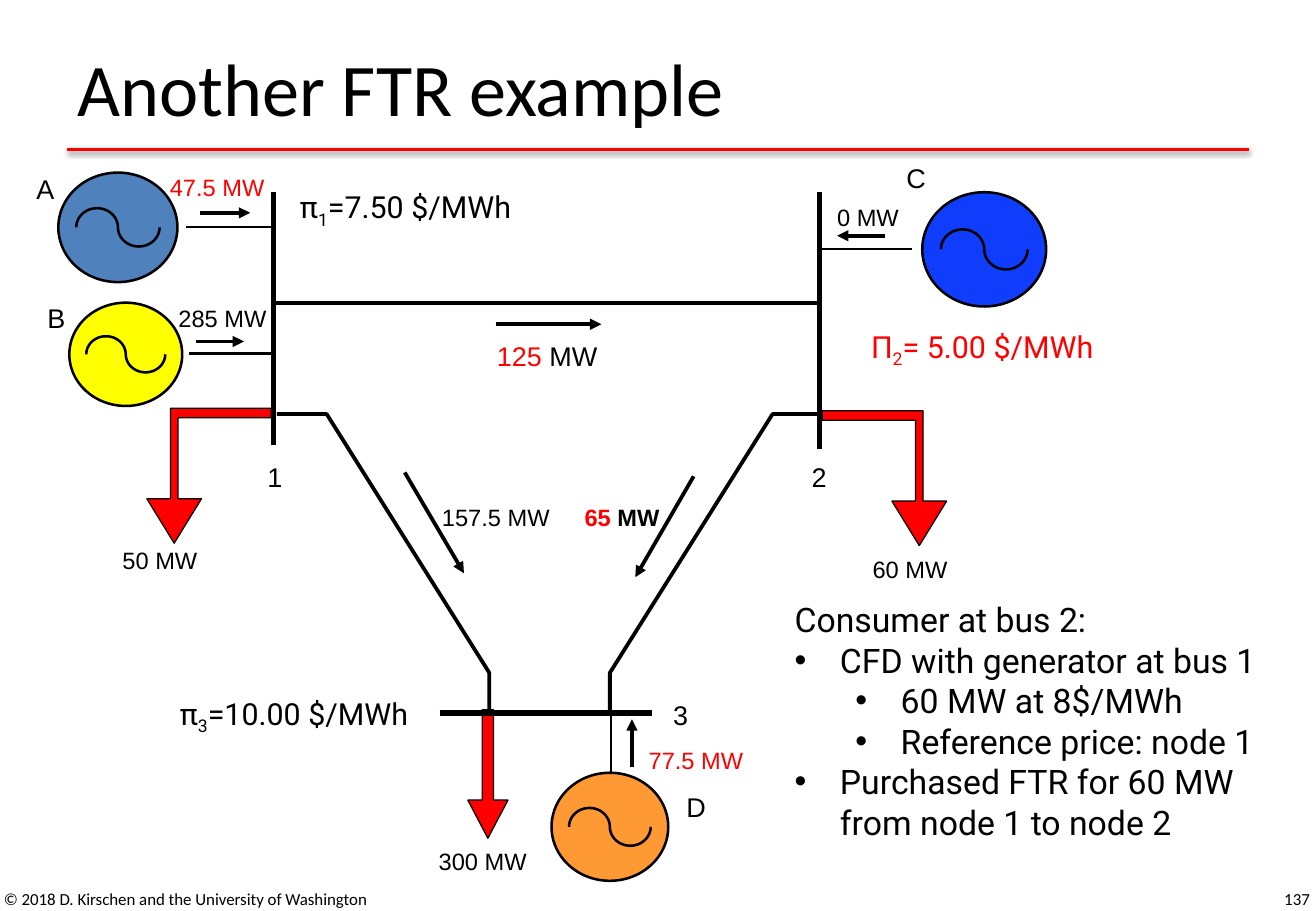
from dataclasses import dataclass
from math import cos, pi, sin

from lxml.etree import SubElement
from pptx import Presentation
from pptx.dml.color import RGBColor
from pptx.enum.shapes import MSO_CONNECTOR, MSO_SHAPE
from pptx.enum.text import MSO_ANCHOR, MSO_AUTO_SIZE, PP_ALIGN
from pptx.oxml.ns import qn
from pptx.util import Cm, Pt

COLORS = {"black": "000000", "red": "FF0000", "steel": "4F81BD",
          "yellow": "FFFF00", "blue": "103DFC", "orange": "FF9933"}
NO_MARGINS = {"margin_left": 0, "margin_right": 0, "margin_top": 0, "margin_bottom": 0}
TITLE = {"name": "Calibri", "size": Pt(44)}
FOOTER = {"name": "Calibri", "size": Pt(10)}
LETTER = {"name": "Arial", "size": Pt(16)}
POWER = {"name": "Arial", "size": Pt(14)}
STRONG = {**POWER, "bold": True}
PRICE = {"name": "Roboto", "size": Pt(18)}
NOTE = {"name": "Roboto", "size": Pt(20)}

GENERATORS = [(0.46, 0.23, 2.49, 2.29, "steel"), (0.69, 2.95, 2.36, 2.16, "yellow"),
              (18.52, 0.64, 2.59, 2.39, "blue"), (10.77, 12.78, 2.44, 2.26, "orange")]
BUSES = [(4.95, 0.64, 4.95, 5.92), (16.38, 0.64, 16.38, 6.02), (8.43, 11.53, 12.88, 11.53)]
STUBS = [(3.12, 1.37, 4.95, 1.37), (3.2, 4.01, 4.95, 4.01),
         (18.31, 1.83, 16.43, 1.83), (12.01, 13.11, 12.01, 11.51)]
FLOWS = [(3.43, 1.07, 4.47, 1.07), (3.33, 3.76, 4.34, 3.76), (17.75, 1.55, 16.74, 1.55),
         (9.6, 3.4, 11.81, 3.4), (7.7, 6.5, 8.94, 8.61), (13.74, 6.58, 12.52, 8.69),
         (12.45, 12.65, 12.45, 11.66)]
CORRIDORS = [[(5.03, 5.28), (6.07, 5.28), (9.47, 10.69), (9.47, 11.58)],
             [(16.43, 5.28), (15.39, 5.28), (11.99, 10.69), (11.99, 11.58)]]
LETTERS = [(0, 0.23, "A"), (0.23, 2.92, "B"), (18.19, 0, "C"), (13.59, 13.16, "D"),
           (4.83, 6.25, "1"), (16.21, 6.25, "2"), (13.31, 11.23, "3")]
POWERS = [(1.8, 8.03, POWER, [("50 MW", "black")]),
          (17.48, 8.23, POWER, [("60 MW", "black")]),
          (2.79, 0.23, POWER, [("47.5 MW", "red")]),
          (2.97, 2.97, POWER, [("285 MW", "black")]),
          (16.74, 0.86, POWER, [("0 MW", "black")]),
          (12.8, 12.22, POWER, [("77.5 MW", "red")]),
          (9.63, 3.73, LETTER, [("125", "red"), (" MW", "black")]),
          (11.46, 7.14, STRONG, [("65", "red"), (" MW", "black")]),
          (8.48, 7.14, POWER, [("157.5 MW", "black")]),
          (8.41, 14.33, POWER, [("300 MW", "black")])]
PRICES = [(5.51, 0.56, "π", "1", "=7.50 $/MWh", "black"),
          (17.45, 3.48, "Π", "2", "= 5.00 $/MWh", "red"),
          (3, 11.15, "π", "3", "=10.00 $/MWh", "black")]
NOTES = [(None, "Consumer at bus 2:"), (0, "CFD with generator at bus 1"),
         (1, "60 MW at 8$/MWh"), (1, "Reference price: node 1"),
         (0, "Purchased FTR for 60 MW\vfrom node 1 to node 2")]


@dataclass
class Box:
    """Rectangle in centimetres."""
    left: float
    top: float
    width: float
    height: float

    def inner(self, left, top, width, height):
        """Return a box offset from this one."""
        return Box(self.left + left, self.top + top, width, height)

    def lengths(self):
        """Return the four sides as lengths."""
        return [Cm(side) for side in (self.left, self.top, self.width, self.height)]


def apply_formats(target, formats):
    """Set attributes from a dict."""
    for name, value in formats.items():
        setattr(target, name, value)


def color_of(name):
    """Return a named colour."""
    return RGBColor.from_string(COLORS[name])


def style_span(span, color, formats):
    """Format one run of text."""
    apply_formats(span.font, formats)
    span.font.color.rgb = color_of(color)


def style_shape(shape, fill, width):
    """Give a shape its fill and black outline."""
    shape.shadow.inherit = False
    if fill:
        shape.fill.solid()
        shape.fill.fore_color.rgb = color_of(fill)
    else:
        shape.fill.background()
    shape.line.color.rgb = color_of("black")
    shape.line.width = Pt(width)


def add_label(page, box, spans, formats, align=PP_ALIGN.LEFT):
    """Add a one-line text box and return its runs."""
    frame = page.shapes.add_textbox(*box.lengths()).text_frame
    apply_formats(frame, {"word_wrap": True, **NO_MARGINS})
    para = frame.paragraphs[0]
    para.alignment = align
    for text, color in spans:
        span = para.add_run()
        span.text = text
        style_span(span, color, formats)
    return para.runs


def add_line(page, box, ends, width, color="black", arrow=False):
    """Add a straight line inside a box and return its effect list."""
    x1, y1, x2, y2 = ends
    line = page.shapes.add_connector(
        MSO_CONNECTOR.STRAIGHT, Cm(box.left + x1), Cm(box.top + y1),
        Cm(box.left + x2), Cm(box.top + y2))
    line.line.color.rgb = color_of(color)
    line.line.width = Pt(width)
    properties = line.element.spPr
    if arrow:
        SubElement(properties.find(qn("a:ln")), qn("a:tailEnd"), type="triangle")
    return SubElement(properties, qn("a:effectLst"))


def add_outline(page, box, points, width, fill=None, close=False):
    """Draw an outline through points given in centimetres within a box."""
    corners = [(Cm(box.left + x), Cm(box.top + y)) for x, y in points]
    builder = page.shapes.build_freeform(*corners[0], scale=1.0)
    builder.add_line_segments(corners[1:], close=close)
    style_shape(builder.convert_to_shape(), fill, width)


def add_heading(page, box):
    """Place the title and the shadowed rule below it."""
    title = page.shapes.title
    apply_formats(title, dict(zip(("left", "top", "width", "height"), box.lengths())))
    frame = title.text_frame
    frame.text = "Another FTR example"
    apply_formats(frame, {"vertical_anchor": MSO_ANCHOR.MIDDLE,
                          "auto_size": MSO_AUTO_SIZE.NONE, "word_wrap": True})
    para = frame.paragraphs[0]
    para.alignment = PP_ALIGN.LEFT
    style_span(para.runs[0], "black", TITLE)
    effects = add_line(page, box, (0.03, 2.79, 24.74, 2.79), 2, "red")
    shadow = SubElement(effects, qn("a:outerShdw"), blurRad=str(Pt(3.1)),
                        dist=str(Pt(1.6)), dir="5400000", rotWithShape="0")
    tint = SubElement(shadow, qn("a:srgbClr"), val=COLORS["black"])
    SubElement(tint, qn("a:alpha"), val="38000")


def add_generator(page, box, fill):
    """Draw a generator circle with a sine wave."""
    circle = page.shapes.add_shape(MSO_SHAPE.OVAL, *box.lengths())
    style_shape(circle, fill, 1.5)
    steps = 24
    wave = []
    for center, side in ((0.325, -1), (0.675, 1)):
        for step in range(steps + 1):
            angle = pi * step / steps
            wave.append(((center - 0.175 * cos(angle)) * box.width,
                         (0.5 + side * 0.175 * sin(angle)) * box.height))
    add_outline(page, box, wave, 1.5)


def add_bent_load(page, box, mirrored):
    """Draw a bent load arrow pointing down."""
    arrow = [(0.22, 1), (0.44, 0.67), (0.25, 0.67), (0.25, 0.07), (1, 0.07),
             (1, 0), (0.19, 0), (0.19, 0.67), (0, 0.67)]
    points = [((1 - x if mirrored else x) * box.width, y * box.height) for x, y in arrow]
    add_outline(page, box, points, 0.75, "red", close=True)


def add_network(page, box):
    """Draw the three-bus network with its flows and labels."""
    load = page.shapes.add_shape(
        MSO_SHAPE.DOWN_ARROW, *box.inner(9.02, 11.46, 0.84, 2.69).lengths())
    load.adjustments[0], load.adjustments[1] = 0.28, 0.95
    style_shape(load, "red", 0.75)
    add_bent_load(page, box.inner(2.31, 5.16, 2.6, 2.82), False)
    add_bent_load(page, box.inner(16.43, 5.21, 2.6, 2.82), True)
    for lines, width, arrow in ((STUBS, 1.5, False), (BUSES, 3, False),
                                ([(4.95, 2.95, 16.38, 2.95)], 2.25, False),
                                (FLOWS, 2.25, True)):
        for ends in lines:
            add_line(page, box, ends, width, arrow=arrow)
    for points in CORRIDORS:
        add_outline(page, box, points, 2.25)
    for *place, fill in GENERATORS:
        add_generator(page, box.inner(*place), fill)
    for x, y, text in LETTERS:
        add_label(page, box.inner(x, y, 0.9, 0.75), [(text, "black")], LETTER)
    for x, y, formats, spans in POWERS:
        add_label(page, box.inner(x, y, 2.5, 0.71), spans, formats)
    for x, y, symbol, bus, value, color in PRICES:
        spans = [(text, color) for text in (symbol, bus, value)]
        runs = add_label(page, box.inner(x, y, 4.9, 0.76), spans, PRICE)
        runs[1].font._element.set("baseline", "-25000")


def add_notes(page, box):
    """List the consumer's contracts."""
    frame = page.shapes.add_textbox(*box.lengths()).text_frame
    frame.word_wrap = True
    for index, (level, text) in enumerate(NOTES):
        para = frame.add_paragraph() if index else frame.paragraphs[0]
        para.text = text
        for span in para.runs:
            style_span(span, "black", NOTE)
        if level is not None:
            para.level = level
            properties = para._p.get_or_add_pPr()
            properties.set("marL", str(Cm(0.95 + 1.27 * level)))
            properties.set("indent", str(Cm(-0.95)))
            SubElement(properties, qn("a:buFont"), typeface="Arial")
            SubElement(properties, qn("a:buChar"), char="•")


def add_footer(page, box):
    """Place the copyright line and the page number."""
    add_label(page, box.inner(0, 0, 10.5, box.height),
              [("© 2018 D. Kirschen and the University of Washington", "black")], FOOTER)
    add_label(page, box.inner(box.width - 6, 0, 6, box.height),
              [("137", "black")], FOOTER, PP_ALIGN.RIGHT)


def main():
    """Build and save the deck."""
    deck = Presentation()
    deck.slide_width, deck.slide_height = Cm(27.51), Cm(19.05)
    page = deck.slides.add_slide(deck.slide_layouts[5])
    add_heading(page, Box(1.37, 0.33, 24.77, 2.97))
    add_network(page, Box(0.76, 3.38, 20.4, 15.1))
    add_notes(page, Box(16.36, 12.4, 10.4, 5.38))
    add_footer(page, Box(0.08, 18.59, 27.3, 0.45))
    deck.save("out.pptx")


if __name__ == "__main__":
    main()
